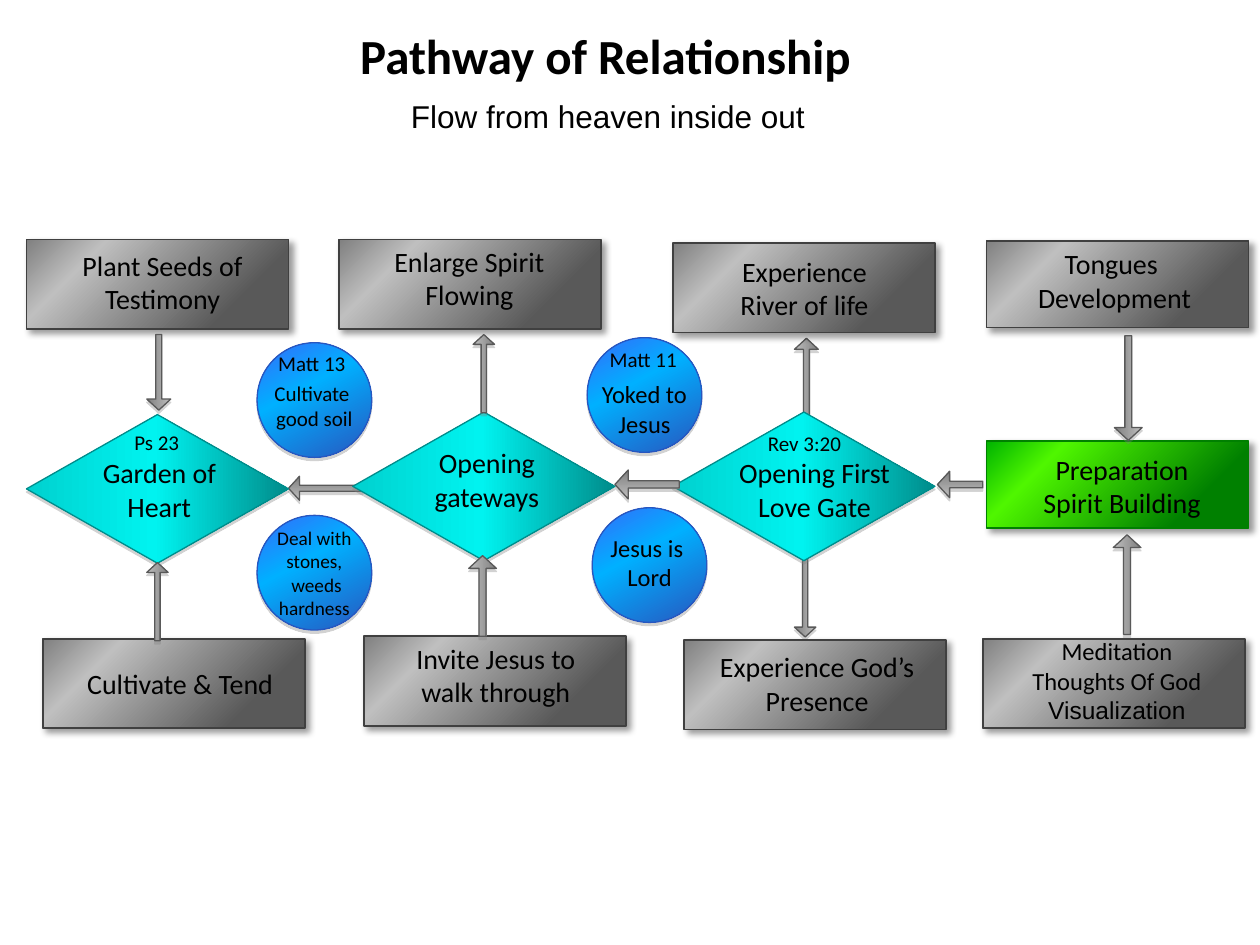
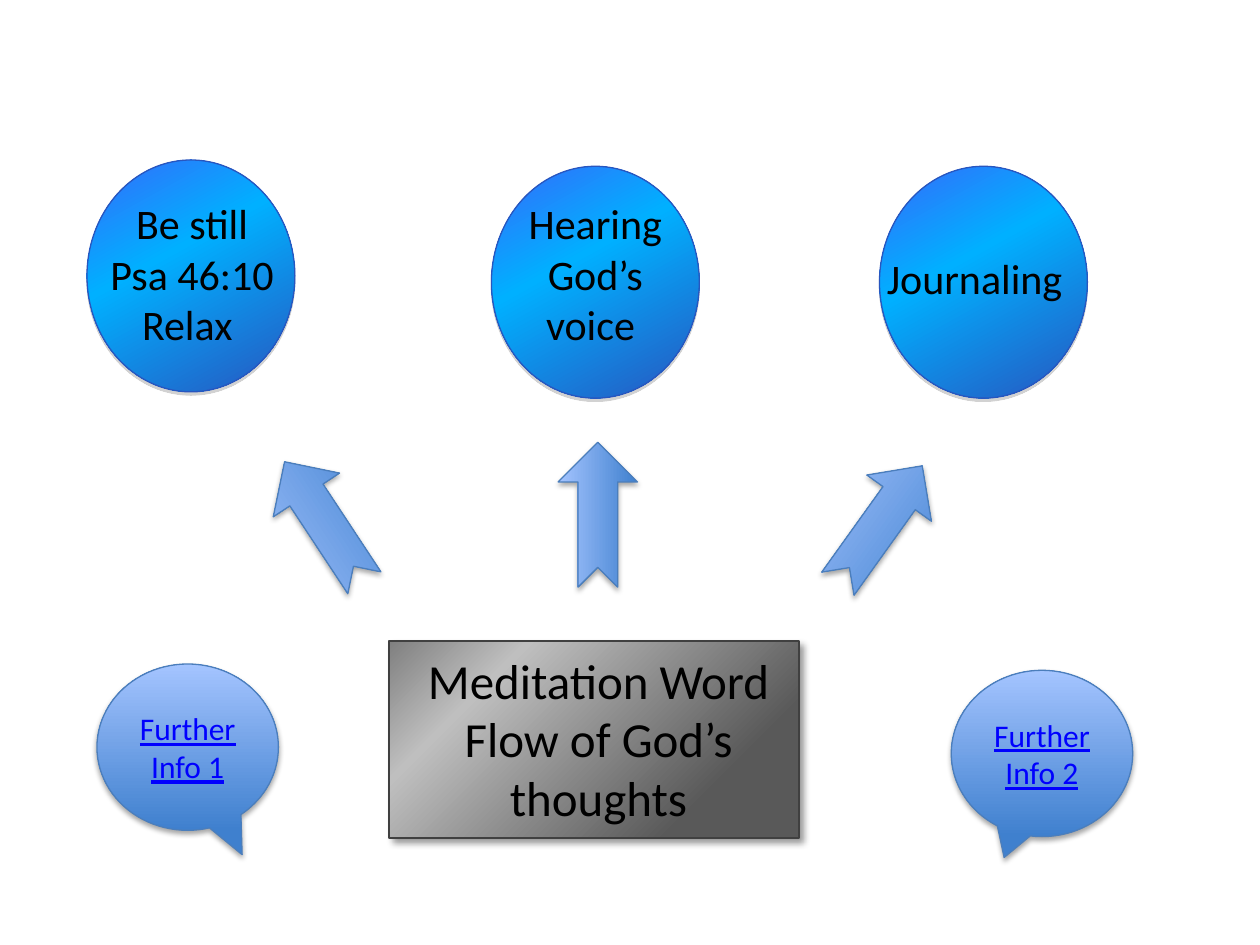
from lxml import etree
from pptx import Presentation
from pptx.dml.color import RGBColor
from pptx.enum.shapes import MSO_SHAPE
from pptx.enum.text import MSO_ANCHOR, MSO_AUTO_SIZE, PP_ALIGN
from pptx.oxml.ns import qn
from pptx.util import Inches, Pt

RECTANGLE = MSO_SHAPE.RECTANGLE
DIAMOND = MSO_SHAPE.DIAMOND
OVAL = MSO_SHAPE.OVAL
ARROW = MSO_SHAPE.RIGHT_ARROW
NOTCHED_ARROW = MSO_SHAPE.NOTCHED_RIGHT_ARROW
CALLOUT = MSO_SHAPE.OVAL_CALLOUT
CENTER = PP_ALIGN.CENTER
TOP, MIDDLE = MSO_ANCHOR.TOP, MSO_ANCHOR.MIDDLE
FIT_SHAPE, FIT_NONE = MSO_AUTO_SIZE.SHAPE_TO_FIT_TEXT, MSO_AUTO_SIZE.NONE

COLUMNS, ROWS = 100, 75
TITLE_ONLY, BLANK = 5, 6
BODY_FONT, PLAIN_FONT = "Calibri", "Arial"
BLACK, LINK_BLUE = "000000", "0000FF"
DOWN, LEFT, UP = 90, 180, 270

# Shadow: colour, opacity %, blur pt, distance pt, direction
CARD_SHADOW = (BLACK, 40, 4, 3, 45)
FLAT_SHADOW = ("808080", 35, 0, 1.8, 90)
SOFT_SHADOW = (BLACK, 35, 3.1, 1.8, 90)

# Look: gradient stops, gradient angle, line colour, line width, shadow
GRAY_CARD = ([(22, "595959"), (77, "BFBFBF"), (100, "808080")], 225, "404040", 1, CARD_SHADOW)
GREEN_CARD = ([(22, "008000"), (77, "4FF600"), (100, "00B300")], 225, "008000", 1, CARD_SHADOW)
CYAN = ([(0, "00D1CF"), (49, "00F3F0"), (100, "008C8B")], 0, "008C8B", 0.75, FLAT_SHADOW)
BLUE = ([(0, "336FFA"), (2, "336FFA"), (40, "00B0FF"), (100, "2856BF")], 61, "2856BF", 0.75, FLAT_SHADOW)
GRAY_ARROW = ([(0, "BFBFBF"), (100, "7F7F7F")], 90, "595959", 0.75, FLAT_SHADOW)
SKY = ([(0, "3F80CE"), (100, "A4C4FF")], 270, "4B7EBC", 0.75, SOFT_SHADOW)


def color(hex_text):
    return RGBColor.from_string(hex_text)


def add_color(parent, hex_text, opacity=100):
    element = etree.SubElement(parent, qn("a:srgbClr"), val=hex_text)
    if opacity < 100:
        etree.SubElement(element, qn("a:alpha"), val=str(opacity * 1000))


class Deck:
    """Holds the presentation, its grid and the slide being drawn."""

    def __init__(self):
        self.presentation = Presentation()
        self.presentation.slide_width = Inches(10)
        self.presentation.slide_height = Inches(7.5)
        self.column = self.presentation.slide_width / COLUMNS
        self.row = self.presentation.slide_height / ROWS
        self.slide = None

    def new_slide(self, layout):
        layouts = self.presentation.slide_layouts
        self.slide = self.presentation.slides.add_slide(layouts[layout])

    def place(self, left, top, width, height):
        """Turn grid columns and rows into slide lengths."""
        return (round(left * self.column), round(top * self.row),
                round(width * self.column), round(height * self.row))

    def style_run(self, run, size, font=BODY_FONT, ink=BLACK):
        run.font.size = Pt(size)
        run.font.name = font
        run.font.color.rgb = color(ink)

    def set_text(self, text_frame, text, size, font=BODY_FONT, ink=BLACK):
        text_frame.word_wrap = True
        text_frame.text = text
        for paragraph in text_frame.paragraphs:
            paragraph.alignment = CENTER
            for run in paragraph.runs:
                self.style_run(run, size, font, ink)

    def title(self, text, at, size):
        shape = self.slide.shapes.title
        shape.left, shape.top, shape.width, shape.height = self.place(*at)
        self.set_text(shape.text_frame, text, size)
        shape.text_frame.vertical_anchor = TOP
        shape.text_frame.auto_size = FIT_NONE
        shape.text_frame.paragraphs[0].runs[0].font.bold = True

    def label(self, text, at, size, font=BODY_FONT, inset=True):
        box = self.slide.shapes.add_textbox(*self.place(*at))
        frame = box.text_frame
        self.set_text(frame, text, size, font)
        frame.auto_size = FIT_SHAPE
        if not inset:
            frame.margin_left = frame.margin_right = 0
            frame.margin_top = frame.margin_bottom = 0
        return box

    def shape(self, kind, at, look, rotation=0, adjustments=()):
        stops, angle, line_color, line_width, shadow = look
        shape = self.slide.shapes.add_shape(kind, *self.place(*at))
        shape.rotation = rotation
        for index, value in enumerate(adjustments):
            shape.adjustments[index] = value
        shape.line.color.rgb = color(line_color)
        shape.line.width = Pt(line_width)
        self.fill_gradient(shape, stops, angle)
        self.cast_shadow(shape, *shadow)
        return shape

    def fill_gradient(self, shape, stops, angle):
        shape.fill.gradient()
        shape.fill.gradient_angle = (360 - angle) % 360
        stop_list = shape._element.spPr.find(qn("a:gradFill")).find(qn("a:gsLst"))
        for old_stop in list(stop_list):
            stop_list.remove(old_stop)
        for position, hex_text in stops:
            stop = etree.SubElement(stop_list, qn("a:gs"), pos=str(position * 1000))
            add_color(stop, hex_text)

    def cast_shadow(self, shape, hex_text, opacity, blur, distance, direction):
        shape.shadow.inherit = False
        effects = shape._element.spPr.find(qn("a:effectLst"))
        outer = etree.SubElement(
            effects, qn("a:outerShdw"), blurRad=str(Pt(blur)), dist=str(Pt(distance)),
            dir=str(direction * 60000), algn="tl", rotWithShape="0")
        add_color(outer, hex_text, opacity)

    def card(self, left, top, look=GRAY_CARD, height=7.1):
        self.shape(RECTANGLE, (left, top, 20.8, height), look)

    def diamond(self, left, top):
        self.shape(DIAMOND, (left, top, 20.8, 11.8), CYAN)

    def arrow(self, at, direction):
        self.shape(ARROW, at, GRAY_ARROW, direction, (0.25, 0.458))

    def circle(self, left, top):
        self.shape(OVAL, (left, top, 9.1, 9.1), BLUE)

    def callout(self, text, at, adjustments=()):
        shape = self.shape(CALLOUT, at, SKY, adjustments=adjustments)
        self.set_text(shape.text_frame, text, 18, ink=LINK_BLUE)
        shape.text_frame.vertical_anchor = MIDDLE
        shape.text_frame.paragraphs[0].runs[0].font.underline = True


def draw_pathway(deck):
    deck.new_slide(TITLE_ONLY)
    deck.title("Pathway of Relationship", (19.9, 1.5, 56.3, 5.7), 28)
    deck.label("Flow from heaven inside out", (29.4, 7.2, 37.7, 4), 18, PLAIN_FONT)

    # Preparation
    deck.card(78.3, 19.1, height=6.9)
    deck.card(78.3, 35, GREEN_CARD, height=6.9)
    deck.card(78, 50.7)
    deck.arrow((85.5, 45.3, 7.9, 2.2), UP)
    deck.arrow((85.4, 29.7, 8.3, 2.2), DOWN)

    # First love gate
    deck.arrow((60.8, 46.6, 6.2, 1.7), DOWN)
    deck.arrow((60.9, 29, 6.2, 1.9), UP)
    deck.diamond(53.4, 32.7)
    deck.card(53.4, 19.3)
    deck.card(54.3, 50.8)

    # Flow from right to left
    for at in [(48.8, 37.3, 5.1, 2.3), (22.9, 37.8, 5.9, 1.9), (74.4, 37.4, 3.6, 2.1)]:
        deck.arrow(at, LEFT)

    # Garden of heart
    deck.diamond(2.1, 32.9)
    deck.card(2.1, 19)
    deck.card(3.4, 50.7)
    deck.arrow((9.6, 28.6, 6, 1.9), DOWN)
    deck.arrow((9.4, 46.9, 6.2, 1.7), UP)

    # Opening gateways
    deck.diamond(28, 32.7)
    deck.card(26.9, 19)
    deck.card(28.9, 50.5)
    deck.arrow((35.3, 28.8, 6.2, 1.7), UP)
    deck.arrow((35.1, 46.2, 6.4, 2.2), UP)

    for left, top in [(46.6, 26.8), (47, 40.3), (20.4, 40.9), (20.4, 27.2)]:
        deck.circle(left, top)

    for text, left, top, width in [
        ("Tongues \vDevelopment", 78.7, 19.1, 19.5),
        ("Preparation\vSpirit Building", 81.2, 35.4, 15.7),
        ("Experience River of life", 56, 19.7, 15.7),
        ("Opening First Love Gate", 56.8, 35.7, 15.7),
        ("Experience God’s Presence", 55.7, 51.1, 18.3),
        ("Enlarge Spirit\vFlowing", 29.4, 18.9, 15.7),
        ("Opening gateways", 30.8, 34.9, 15.7),
        ("Invite Jesus to walk through", 31.5, 50.4, 15.7),
        ("Plant Seeds of\vTestimony", 3.7, 19.2, 18.4),
        ("Garden of Heart", 4.8, 35.7, 15.7),
        ("Cultivate & Tend", 5.1, 52.4, 18.4),
    ]:
        deck.label(text, (left, top, width, 6.4), 16)

    meditation = deck.label("Meditation\vThoughts Of God\v", (79.5, 50, 18.3, 7.9), 14)
    run = meditation.text_frame.paragraphs[0].add_run()
    run.text = "Visualization"
    deck.style_run(run, 14, PLAIN_FONT)

    for verse, left, top in [("Rev 3:20", 59.7, 34.2), ("Ps 23", 8.3, 34.1),
                             ("Matt 11", 46.9, 27.5), ("Matt 13", 20.6, 27.8)]:
        deck.label(verse, (left, top, 8.3, 2), 12, inset=False)

    deck.label("Jesus is \vLord", (46.5, 41.8, 10.1, 5.7), 14)
    for text, left, top, height, size in [
        ("Yoked to Jesus", 46.1, 30.1, 4.7, 14),
        ("Deal with stones,\v weeds hardness", 19.9, 41.8, 7.4, 11),
        ("Cultivate \vgood soil", 19.9, 30.2, 4, 12),
    ]:
        deck.label(text, (left, top, 10.1, height), size, inset=False)


def draw_meditation(deck):
    deck.new_slide(BLANK)
    deck.shape(RECTANGLE, (30.9, 50.9, 32.5, 15.6), GRAY_CARD)
    deck.label("Meditation Word\vFlow of God’s thoughts", (31.6, 51.6, 31.8, 14.1), 28, inset=False)

    for text, left, top, text_left, text_top in [
        ("Be still\nPsa 46:10\nRelax ", 6.9, 12.7, 6.1, 15.7),
        ("Journaling", 69.8, 13.2, 68.2, 20),
        ("Hearing God’s\vvoice ", 39, 13.2, 38.1, 15.7),
    ]:
        deck.shape(OVAL, (left, top, 16.5, 18.4), BLUE)
        deck.label(text, (text_left, text_top, 18.3, 12.1), 24, inset=False)

    deck.callout("Further Info 2", (75.5, 53.2, 14.4, 13.2))
    deck.callout("Further Info 1", (7.7, 52.7, 14.4, 13.2), (0.3, 0.646))

    for left, top, rotation in [(41.7, 37.7, UP), (20, 38.3, 236.6), (64.1, 38.5, 305.6)]:
        deck.shape(NOTCHED_ARROW, (left, top, 11.5, 6.3), SKY, rotation)


def main():
    deck = Deck()
    draw_pathway(deck)
    draw_meditation(deck)
    deck.presentation.save("out.pptx")


if __name__ == "__main__":
    main()
